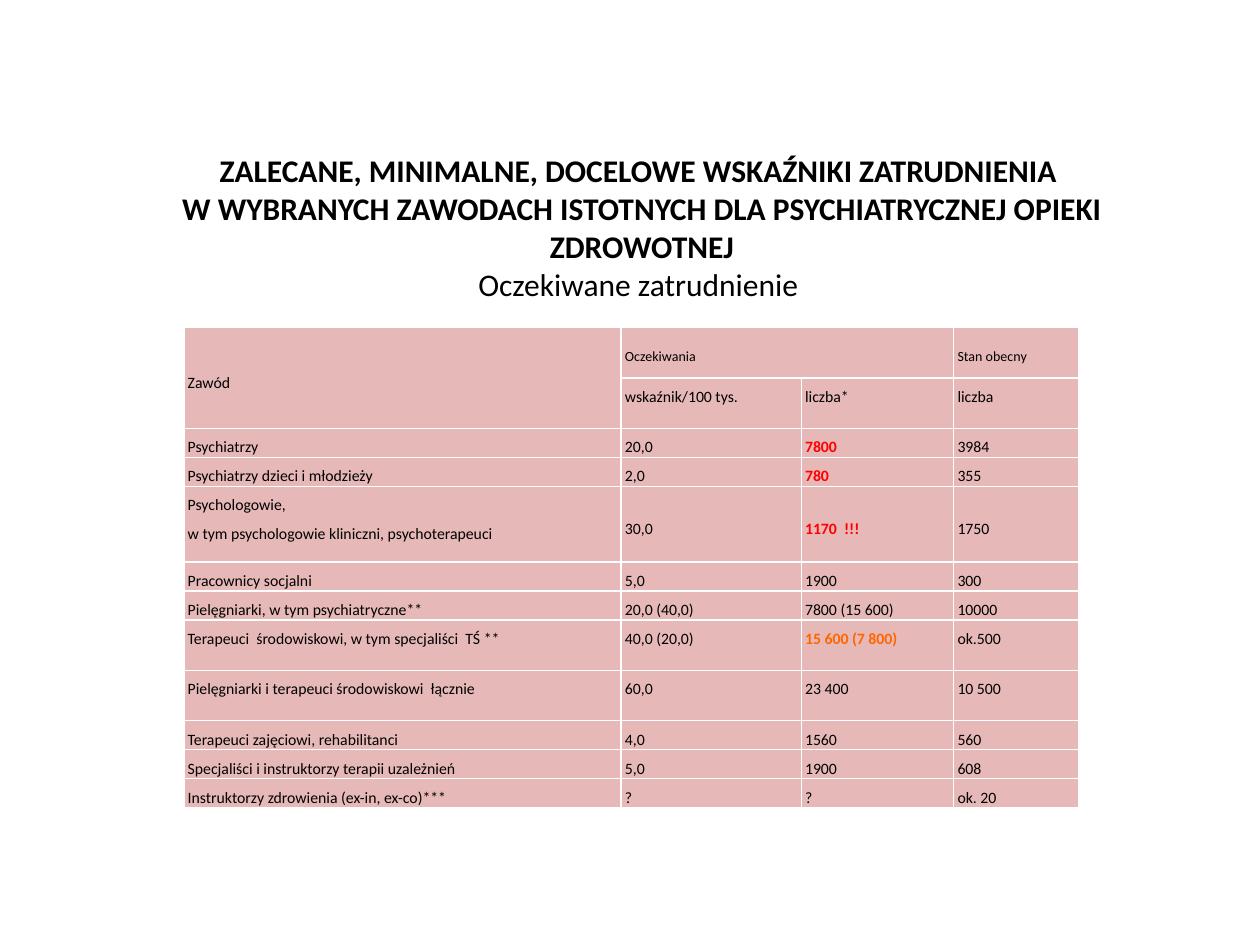
from dataclasses import dataclass

import pptx
import pptx.dml.color
import pptx.enum.text
import pptx.oxml
import pptx.oxml.ns
import pptx.util
from pptx.util import Inches

COLORS = {
    "ink": "000000",
    "line": "FFFFFF",
    "cell": "E6B9B8",
    "red": "FF0000",
    "orange": "FF6600",
}
FONT = "Calibri"
MIDDLE = pptx.enum.text.MSO_ANCHOR.MIDDLE
TOP = pptx.enum.text.MSO_ANCHOR.TOP
CENTER = pptx.enum.text.PP_ALIGN.CENTER
COUNT = 2  # column of the expected head count


@dataclass
class Row:
    height: float
    cells: tuple[str, str, str, str]
    tone: str = "ink"  # colour of the expected count
    middle: bool = False  # centre the figures vertically


WIDTHS = (3.47, 1.43, 1.21, 0.99)
LOW, HIGH = 0.23, 0.4
ROWS = (
    Row(HIGH, ("Zawód", "Oczekiwania", "", "Stan obecny"), middle=True),
    Row(HIGH, ("", "wskaźnik/100 tys.", "liczba*", "liczba")),
    Row(LOW, ("Psychiatrzy", "20,0", "7800", "3984"), "red"),
    Row(LOW, ("Psychiatrzy dzieci i młodzieży", "2,0", "780", "355"), "red"),
    Row(0.6, ("Psychologowie,\nw tym psychologowie kliniczni, psychoterapeuci",
              "30,0", "1170  !!!", "1750"), "red", True),
    Row(LOW, ("Pracownicy socjalni", "5,0", "1900", "300")),
    Row(LOW, ("Pielęgniarki, w tym psychiatryczne**",
              "20,0 (40,0)", "7800 (15 600)", "10000")),
    Row(HIGH, ("Terapeuci  środowiskowi, w tym specjaliści  TŚ **",
               "40,0 (20,0)", "15 600 (7 800)", "ok.500"), "orange"),
    Row(HIGH, ("Pielęgniarki i terapeuci środowiskowi  łącznie",
               "60,0", "23 400", "10 500")),
    Row(LOW, ("Terapeuci zajęciowi, rehabilitanci", "4,0", "1560", "560")),
    Row(LOW, ("Specjaliści i instruktorzy terapii uzależnień", "5,0", "1900", "608")),
    Row(LOW, ("Instruktorzy zdrowienia (ex-in, ex-co)***", "?", "?", "ok. 20"),
        middle=True),
)


def rgb(name: str) -> pptx.dml.color.RGBColor:
    return pptx.dml.color.RGBColor.from_string(COLORS[name])


def write(para, text: str, *, size: float, bold: bool = False, color: str = "ink") -> None:
    """Append text to a paragraph, turning each newline into a line break."""
    for index, line in enumerate(text.split("\n")):
        if index:
            para.add_line_break()
        if line:
            run = para.add_run()
            run.text = line
            run.font.name = FONT
            run.font.size = pptx.util.Pt(size)
            run.font.bold = bold
            run.font.color.rgb = rgb(color)


def add_title(slide) -> None:
    box = slide.shapes.add_textbox(Inches(1.08), Inches(1.18), Inches(8.03), Inches(1.24))
    frame = box.text_frame
    frame.word_wrap = True
    frame.vertical_anchor = MIDDLE
    para = frame.paragraphs[0]
    para.alignment = CENTER
    write(para, "ZALECANE, MINIMALNE, DOCELOWE WSKAŹNIKI ZATRUDNIENIA \n"
          "W WYBRANYCH ZAWODACH ISTOTNYCH DLA PSYCHIATRYCZNEJ OPIEKI ZDROWOTNEJ\n",
          size=18, bold=True)
    write(para, "Oczekiwane zatrudnienie ", size=18)


def style_cell(cell) -> None:
    props = cell._tc.get_or_add_tcPr()
    for side in ("lnL", "lnR", "lnT", "lnB"):
        props.append(pptx.oxml.parse_xml(
            f'<a:{side} {pptx.oxml.ns.nsdecls("a")} w="{pptx.util.Pt(1)}"><a:solidFill>'
            f'<a:srgbClr val="{COLORS["line"]}"/></a:solidFill></a:{side}>'))
    cell.fill.solid()
    cell.fill.fore_color.rgb = rgb("cell")
    cell.margin_left = cell.margin_right = Inches(0.03)
    cell.margin_top = cell.margin_bottom = 0


def fill_cell(cell, text: str, *, size: float, color: str) -> None:
    frame = cell.text_frame
    for index, line in enumerate(text.split("\n")):
        para = frame.add_paragraph() if index else frame.paragraphs[0]
        para.line_spacing = 1.5
        para.font.size = pptx.util.Pt(size)
        write(para, line, size=size, bold=color != "ink", color=color)


def add_table(slide) -> None:
    height = sum(row.height for row in ROWS)
    table = slide.shapes.add_table(
        len(ROWS), len(WIDTHS), Inches(1.46), Inches(2.6),
        Inches(sum(WIDTHS)), Inches(height)).table
    table.first_row = table.horz_banding = False
    for column, width in zip(table.columns, WIDTHS):
        column.width = Inches(width)
    for top, row in enumerate(ROWS):
        table.rows[top].height = Inches(row.height)
        for left, text in enumerate(row.cells):
            cell = table.cell(top, left)
            style_cell(cell)
            cell.vertical_anchor = MIDDLE if row.middle and (left or not top) else TOP
            fill_cell(cell, text, size=8 if left and not top else 9,
                      color=row.tone if left == COUNT else "ink")
    table.cell(0, 0).merge(table.cell(1, 0))
    table.cell(0, 1).merge(table.cell(0, 2))


def main() -> None:
    deck = pptx.Presentation()
    deck.slide_width, deck.slide_height = Inches(10), Inches(7.5)
    slide = deck.slides.add_slide(deck.slide_layouts[6])
    add_title(slide)
    add_table(slide)
    deck.save("out.pptx")


if __name__ == "__main__":
    main()
